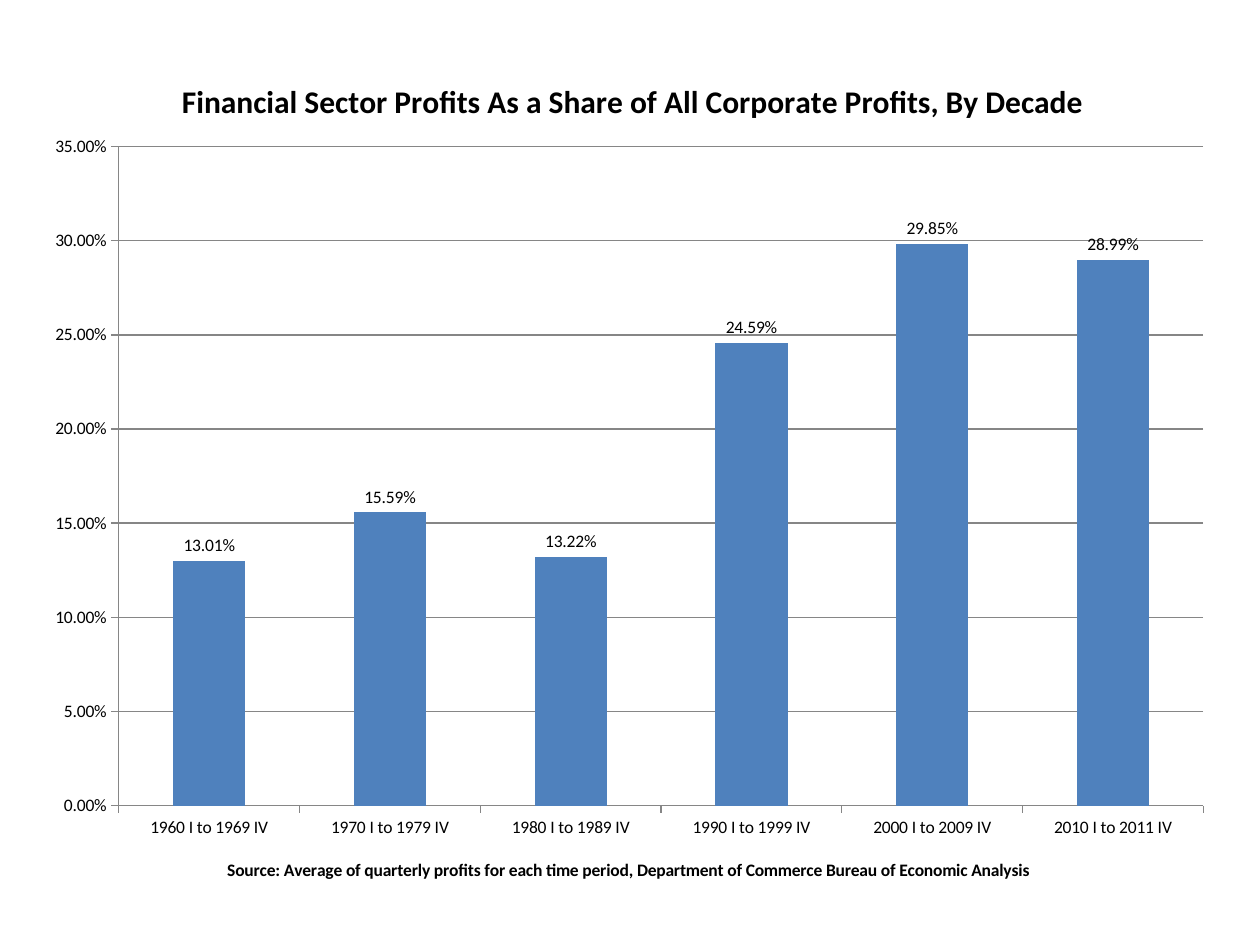
from lxml.etree import SubElement
from pptx import Presentation
from pptx.chart.data import CategoryChartData
from pptx.dml.color import RGBColor
from pptx.enum.chart import XL_CHART_TYPE, XL_LABEL_POSITION, XL_TICK_MARK
from pptx.oxml.ns import qn
from pptx.util import Inches, Pt

COLORS = {"text": "000000", "bar": "4F81BD", "line": "868686", "page": "FFFFFF"}
FONT = "Calibri"
PERCENT = "0.00%"
TITLE = "Financial Sector Profits As a Share of All Corporate Profits, By Decade"
SOURCE = ("Source: Average of quarterly profits for each time period, "
          "Department of Commerce Bureau of Economic Analysis")
SHARES = {
    "1960 I to 1969 IV": 0.1301,
    "1970 I to 1979 IV": 0.1559,
    "1980 I to 1989 IV": 0.1322,
    "1990 I to 1999 IV": 0.2459,
    "2000 I to 2009 IV": 0.2985,
    "2010 I to 2011 IV": 0.2899,
}


def color(name):
    return RGBColor.from_string(COLORS[name])


def style_font(font, size, bold=False):
    font.name = FONT
    font.size = Pt(size)
    font.bold = bold
    font.color.rgb = color("text")


def style_line(line):
    line.color.rgb = color("line")
    line.width = Pt(0.75)


def set_layout(element, **fractions):
    """Place a chart part by fractions of the chart's size."""
    for old in element.findall(qn("c:layout")):
        element.remove(old)
    layout = SubElement(element, qn("c:layout"))
    manual = SubElement(layout, qn("c:manualLayout"))
    if "w" in fractions:
        SubElement(manual, qn("c:layoutTarget")).set("val", "inner")
    for key in ("x", "y"):
        SubElement(manual, qn(f"c:{key}Mode")).set("val", "edge")
    for key, value in fractions.items():
        SubElement(manual, qn(f"c:{key}")).set("val", str(value))
    text = element.find(qn("c:tx"))
    element.insert(0 if text is None else element.index(text) + 1, layout)


def write_title(owner, text, size, x, y):
    owner.has_title = True
    title = owner.chart_title if hasattr(owner, "chart_title") else owner.axis_title
    span = title.text_frame.paragraphs[0].add_run()
    span.text = text
    style_font(span.font, size, bold=True)
    set_layout(title._element, x=x, y=y)


def style_axis(axis):
    axis.major_tick_mark = XL_TICK_MARK.OUTSIDE
    axis.minor_tick_mark = XL_TICK_MARK.NONE
    style_line(axis.format.line)
    style_font(axis.tick_labels.font, 10)


def add_profit_chart(page, left, top, width, height):
    data = CategoryChartData(number_format=PERCENT)
    data.categories = list(SHARES)
    data.add_series("Series 1", list(SHARES.values()))
    chart = page.shapes.add_chart(
        XL_CHART_TYPE.COLUMN_CLUSTERED, left, top, width, height, data).chart
    style_font(chart.font, 10)
    chart.has_legend = False
    write_title(chart, TITLE, 18, 0.12, 0.04)
    write_title(chart.category_axis, SOURCE, 10, 0.16, 0.94)

    style_axis(chart.category_axis)
    values = chart.value_axis
    style_axis(values)
    values.minimum_scale, values.maximum_scale, values.major_unit = 0, 0.35, 0.05
    values.tick_labels.number_format = PERCENT
    values.tick_labels.number_format_is_linked = False
    values.has_major_gridlines = True
    style_line(values.major_gridlines.format.line)

    plot = chart.plots[0]
    plot.gap_width = 150
    plot.vary_by_categories = False
    fill = plot.series[0].format.fill
    fill.solid()
    fill.fore_color.rgb = color("bar")
    labels = plot.series[0].data_labels
    labels.show_value = True
    labels.number_format = PERCENT
    labels.number_format_is_linked = False
    labels.position = XL_LABEL_POSITION.OUTSIDE_END
    style_font(labels.font, 10)
    plot_area = chart._chartSpace.find(".//" + qn("c:plotArea"))
    set_layout(plot_area, x=0.072, y=0.124, w=0.907, h=0.759)


def main():
    deck = Presentation()
    deck.slide_width, deck.slide_height = Inches(10), Inches(7.5)
    page = deck.slides.add_slide(deck.slide_layouts[6])
    page.background.fill.solid()
    page.background.fill.fore_color.rgb = color("page")
    add_profit_chart(page, Inches(0.26), Inches(0.31), Inches(9.49), Inches(6.89))
    deck.save("out.pptx")


if __name__ == "__main__":
    main()
